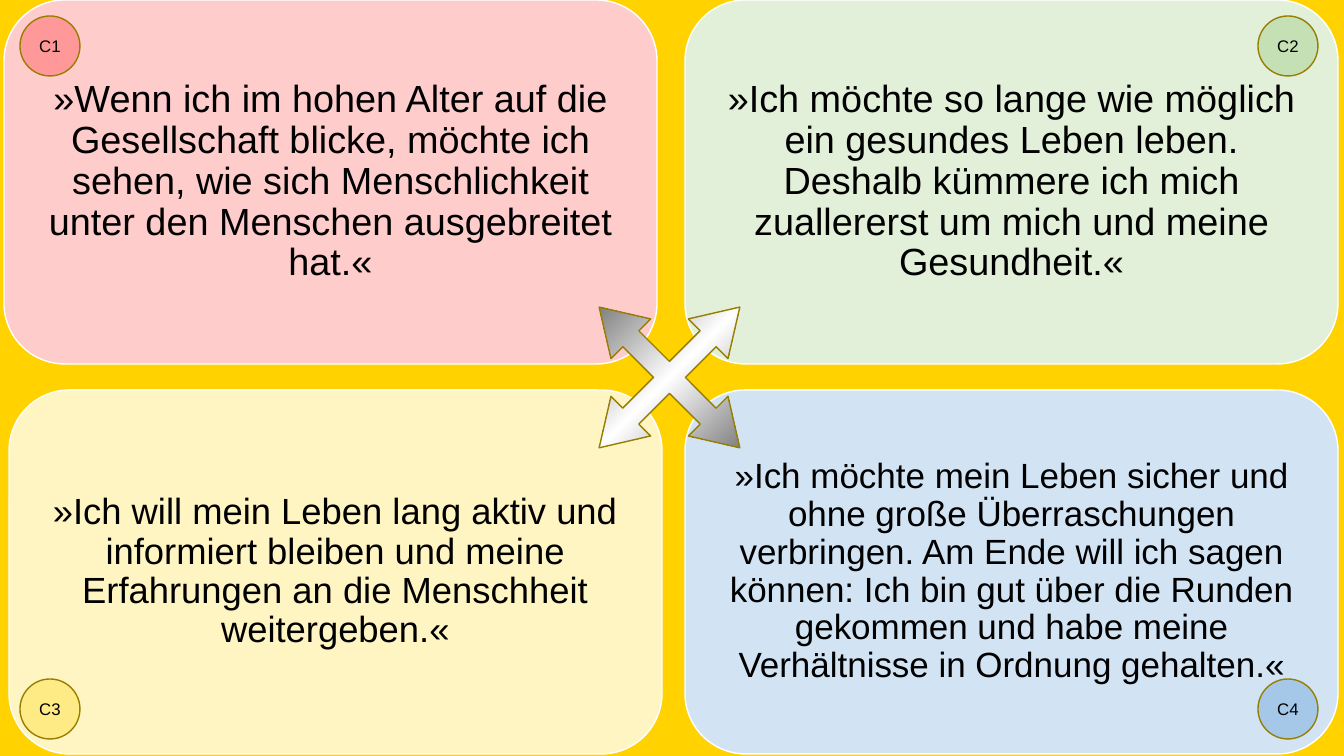
"""Build a slide of four quotes in coloured cards around a four-way arrow."""
from lxml import etree
from pptx import Presentation
from pptx.dml.color import RGBColor
from pptx.enum.shapes import MSO_SHAPE
from pptx.enum.text import MSO_ANCHOR, PP_ALIGN
from pptx.oxml import parse_xml
from pptx.oxml.ns import nsdecls
from pptx.util import Pt

PX = 914400 / 100.8
THEME = {
    "font": "Arial",
    "background": "FFD200",
    "text": "000000",
    "card_line": "FFFFFF",
    "accent_line": "977E00",
    "cards": ["FFCCCC", "E2F0D9", "FFF5C2", "D2E4F4"],
    "badges": ["FF9999", "C5E0B4", "FFEB85", "A5C8E8"],
    "arrow": [(0, "000000"), (50, "FFFFFF"), (100, "000000")],
    "quote_sizes": [27, 27, 26, 25],
    "badge_size": 12,
}
QUOTES = [
    "»Wenn ich im hohen Alter auf die Gesellschaft blicke, möchte ich sehen, "
    "wie sich Menschlichkeit unter den Menschen ausgebreitet hat.«",
    "»Ich möchte so lange wie möglich ein gesundes Leben leben. Deshalb kümmere "
    "ich mich zuallererst um mich und meine Gesundheit.«",
    "»Ich will mein Leben lang aktiv und informiert bleiben und meine "
    "Erfahrungen an die Menschheit weitergeben.«",
    "»Ich möchte mein Leben sicher und ohne große Überraschungen verbringen. "
    "Am Ende will ich sagen können: Ich bin gut über die Runden gekommen und "
    "habe meine Verhältnisse in Ordnung gehalten.«",
]
CARD_SPOTS = [(4, 0), (685, 0), (9, 390), (685, 390)]
CARD_W, CARD_H = 653, 364
BADGE_SPOTS = [(x, y) for y in (16, 679) for x in (20, 1258)]
BADGE = 60


def add_shape(s, kind, box, line, fill=None):
    sp = s.shapes.add_shape(kind, *(round(v * PX) for v in box))
    sp.shadow.inherit = False
    sp.line.color.rgb = RGBColor.from_string(line)
    sp.line.width = Pt(1)
    if fill:
        sp.fill.solid()
        sp.fill.fore_color.rgb = RGBColor.from_string(fill)
    return sp


def add_text(sp, text, size, inset, spacing):
    tf = sp.text_frame
    tf.word_wrap = True
    tf.vertical_anchor = MSO_ANCHOR.MIDDLE
    tf.margin_left = tf.margin_right = round(inset * PX)
    tf.margin_top = tf.margin_bottom = round(inset * PX)
    p = tf.paragraphs[0]
    p.alignment = PP_ALIGN.CENTER
    p.line_spacing = spacing
    r = p.add_run()
    r.text = text
    r.font.name = THEME["font"]
    r.font.size = Pt(size)
    r.font.color.rgb = RGBColor.from_string(THEME["text"])


prs = Presentation()
prs.slide_width, prs.slide_height = round(1344 * PX), round(756 * PX)
s = prs.slides.add_slide(prs.slide_layouts[6])
s.background.fill.solid()
s.background.fill.fore_color.rgb = RGBColor.from_string(THEME["background"])

for (x, y), fill, quote, size in zip(
    CARD_SPOTS, THEME["cards"], QUOTES, THEME["quote_sizes"]
):
    sp = add_shape(s, MSO_SHAPE.ROUNDED_RECTANGLE, (x, y, CARD_W, CARD_H),
                   THEME["card_line"], fill)
    add_text(sp, quote, size, 11 if size > 25 else 10, 0.9)

arrow = add_shape(s, MSO_SHAPE.QUAD_ARROW, (570, 278, 199, 199),
                  THEME["accent_line"])
arrow.rotation = 45
for i, value in enumerate((0.113, 0.141, 0.225)):
    arrow.adjustments[i] = value
arrow.fill.gradient()
arrow.fill.gradient_angle = 0
stops = arrow.element.spPr.find(".//{*}gsLst")
for gs in list(stops):
    stops.remove(gs)
for pos, color in THEME["arrow"]:
    gs = parse_xml(f'<a:gs {nsdecls("a")} pos="{pos * 1000}"/>')
    etree.SubElement(gs, gs.tag[:-2] + "srgbClr", val=color)
    stops.append(gs)

for i, ((x, y), fill) in enumerate(zip(BADGE_SPOTS, THEME["badges"]), 1):
    sp = add_shape(s, MSO_SHAPE.OVAL, (x, y, BADGE, BADGE),
                   THEME["accent_line"], fill)
    add_text(sp, f"C{i}", THEME["badge_size"], 5, 1.0)

prs.save("out.pptx")
